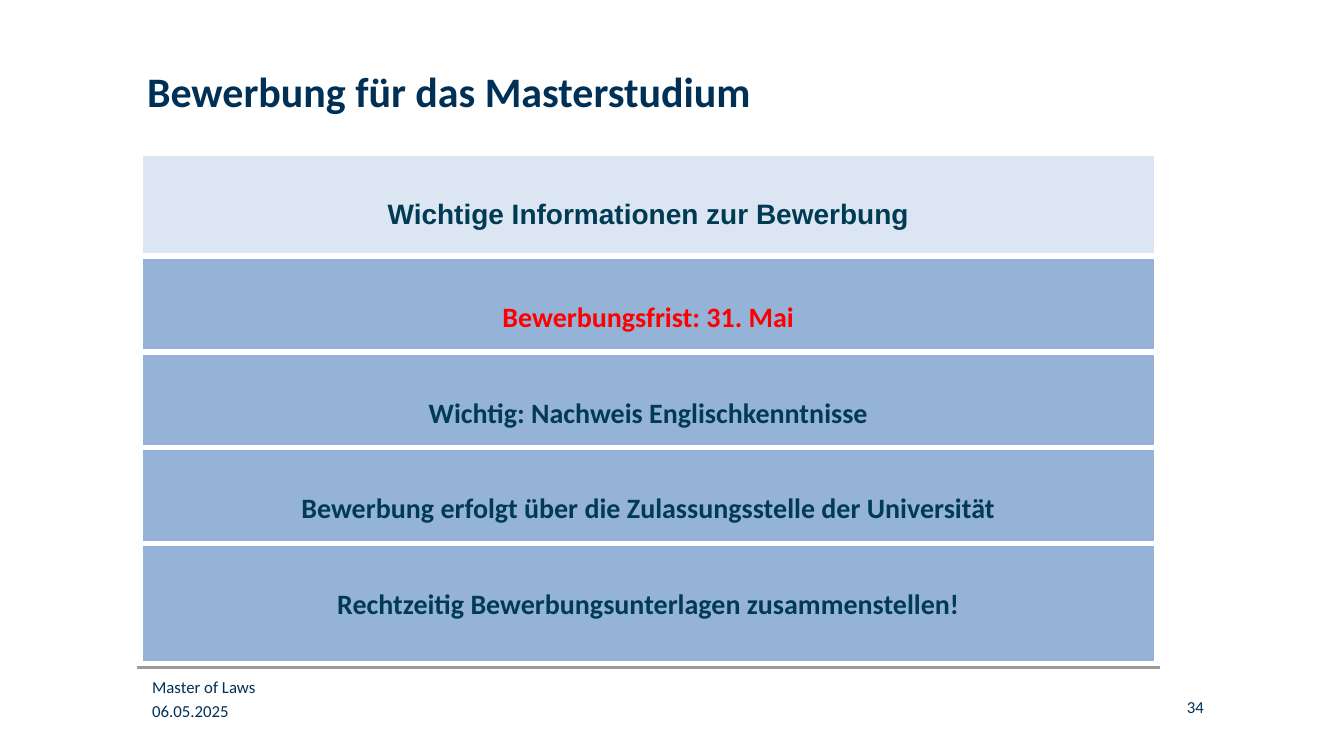
from dataclasses import dataclass

from lxml import etree
from pptx import Presentation
from pptx import util as u
from pptx.dml.color import RGBColor
from pptx.enum import shapes, text
from pptx.oxml import ns

SLIDE_WIDTH, SLIDE_HEIGHT = u.Inches(13.34), u.Inches(7.5)

NAVY = RGBColor(0x00, 0x30, 0x56)
PETROL = RGBColor(0x00, 0x3B, 0x53)
RED = RGBColor(0xFF, 0x00, 0x00)
WHITE = RGBColor(0xFF, 0xFF, 0xFF)
PALE_BLUE = RGBColor(0xDC, 0xE6, 0xF2)
MID_BLUE = RGBColor(0x95, 0xB3, 0xD7)
GREY = RGBColor(0x99, 0x99, 0x9E)

# Bar grid, in percent of the slide's size
BAR_LEFT, BAR_WIDTH, BAR_HEIGHT = 10.42, 75.64, 15.87
HEADING_TOP, FIRST_BAR_TOP, BAR_STEP = 20.27, 33.87, 12.67
FOOTER_HEIGHT = 3.6


@dataclass(frozen=True)
class Bar:
    wording: str
    top: float
    fill: RGBColor = MID_BLUE
    color: RGBColor = PETROL
    font: str = "Calibri"


@dataclass(frozen=True)
class Footer:
    wording: str
    left: float
    top: float
    width: float
    align: text.PP_ALIGN = text.PP_ALIGN.LEFT


MESSAGES = [
    ("Bewerbungsfrist: 31. Mai", RED),
    ("Wichtig: Nachweis Englischkenntnisse", PETROL),
    ("Bewerbung erfolgt über die Zulassungsstelle der Universität", PETROL),
    ("Rechtzeitig Bewerbungsunterlagen zusammenstellen!", PETROL),
]
BARS = [Bar("Wichtige Informationen zur Bewerbung", HEADING_TOP, PALE_BLUE, font="Arial")] + [
    Bar(wording, FIRST_BAR_TOP + row * BAR_STEP, color=color)
    for row, (wording, color) in enumerate(MESSAGES)
]
FOOTERS = [
    Footer("06.05.2025", 11.32, 92.67, 24.96),
    Footer("Master of Laws", 11.32, 89.47, 33.88),
    Footer("34", 77.21, 92.13, 12.37, text.PP_ALIGN.RIGHT),
]


def across(percent: float) -> int:
    return round(SLIDE_WIDTH * percent / 100)


def down(percent: float) -> int:
    return round(SLIDE_HEIGHT * percent / 100)


def area(left: float, top: float, width: float, height: float) -> tuple[int, int, int, int]:
    return across(left), down(top), across(width), down(height)


def write(frame, wording: str, size: float, color: RGBColor, align: text.PP_ALIGN,
          font: str = "Calibri", bold: bool = False) -> None:
    frame.word_wrap = True
    para = frame.paragraphs[0]
    para.alignment = align
    span = para.add_run()
    span.text = wording
    span.font.name, span.font.size, span.font.bold = font, u.Pt(size), bold
    span.font.color.rgb = color


def clear_margins(frame) -> None:
    frame.margin_left = frame.margin_right = frame.margin_top = frame.margin_bottom = 0
    frame.vertical_anchor = text.MSO_ANCHOR.TOP


def add_title(page, wording: str) -> None:
    title = page.shapes.title
    title.left, title.top, title.width, title.height = area(10.94, 8.67, 52.92, 18.27)
    clear_margins(title.text_frame)
    title.text_frame.auto_size = text.MSO_AUTO_SIZE.NONE
    write(title.text_frame, wording, 30, NAVY, text.PP_ALIGN.LEFT, bold=True)


def add_footer(page, footer: Footer) -> None:
    box = page.shapes.add_textbox(*area(footer.left, footer.top, footer.width, FOOTER_HEIGHT))
    clear_margins(box.text_frame)
    write(box.text_frame, footer.wording, 12, NAVY, footer.align)


def add_rule(page) -> None:
    rule = page.shapes.add_connector(shapes.MSO_CONNECTOR.STRAIGHT, across(10.19), down(88.33),
                                     across(86.28), down(88.33))
    rule.line.color.rgb, rule.line.width = GREY, u.Pt(2.25)
    etree.SubElement(rule._element.spPr, ns.qn("a:effectLst"))


def add_bar(page, bar: Bar) -> None:
    box = page.shapes.add_shape(shapes.MSO_SHAPE.RECTANGLE,
                                *area(BAR_LEFT, bar.top, BAR_WIDTH, BAR_HEIGHT))
    box.shadow.inherit = False
    box.fill.solid()
    box.fill.fore_color.rgb = bar.fill
    box.line.color.rgb, box.line.width = WHITE, u.Pt(3.82)
    box.text_frame.vertical_anchor = text.MSO_ANCHOR.MIDDLE
    write(box.text_frame, bar.wording, 20, bar.color, text.PP_ALIGN.CENTER, bar.font, True)


def main() -> None:
    deck = Presentation()
    deck.slide_width, deck.slide_height = SLIDE_WIDTH, SLIDE_HEIGHT
    page = deck.slides.add_slide(deck.slide_layouts.get_by_name("Title Only"))

    # Title, footer line and footer texts
    add_title(page, "Bewerbung für das Masterstudium")
    add_rule(page)
    for footer in FOOTERS:
        add_footer(page, footer)

    # Stacked bars, each overlapping the one above
    for bar in BARS:
        add_bar(page, bar)

    deck.save("out.pptx")


if __name__ == "__main__":
    main()
